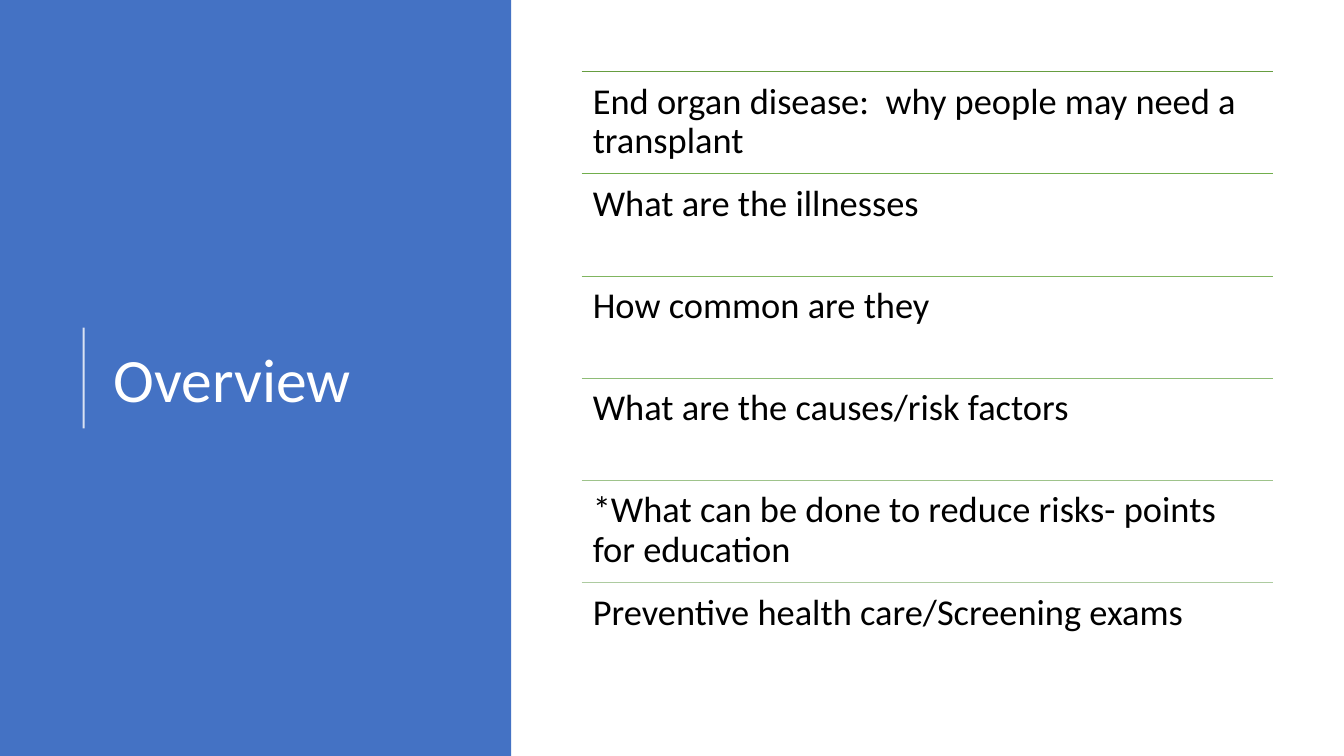
from pptx import Presentation, util as u
from pptx.dml.color import RGBColor
from pptx.enum import shapes, text
from pptx.oxml.ns import qn
from lxml import etree


def tint(code):
    return RGBColor.from_string(code)


class Deck:
    font = "Calibri"

    def __init__(self, wide, high):
        self.show = Presentation()
        self.show.slide_width = u.Inches(wide)
        self.show.slide_height = u.Inches(high)
        self.slide = self.show.slides.add_slide(self.show.slide_layouts[6])

    def panel(self, box, fill):
        shape = self.slide.shapes.add_shape(
            shapes.MSO_SHAPE.RECTANGLE, *map(u.Inches, box))
        shape.shadow.inherit = False
        shape.fill.solid()
        shape.fill.fore_color.rgb = tint(fill)
        shape.line.fill.background()

    def rule(self, ends, color, width, alpha=100):
        line = self.slide.shapes.add_connector(
            shapes.MSO_CONNECTOR.STRAIGHT, *map(u.Inches, ends))
        line.line.color.rgb = tint(color)
        line.line.width = u.Pt(width)
        props = line._element.spPr
        if alpha < 100:
            shade = props.find(".//" + qn("a:srgbClr"))
            etree.SubElement(shade, qn("a:alpha"), val=str(alpha * 1000))
        etree.SubElement(props, qn("a:effectLst"))

    def label(self, box, words, size, color, inset, anchor):
        frame = self.slide.shapes.add_textbox(*map(u.Inches, box)).text_frame
        frame.word_wrap = True
        frame.vertical_anchor = anchor
        frame.margin_left = frame.margin_right = u.Inches(inset[0])
        frame.margin_top = frame.margin_bottom = u.Inches(inset[1])
        para = frame.paragraphs[0]
        para.line_spacing = 0.9
        run = para.add_run()
        run.text = words
        run.font.name = self.font
        run.font.size = u.Pt(size)
        run.font.color.rgb = tint(color)


def main():
    deck = Deck(13.33, 7.5)

    # Title panel
    deck.panel((0, 0, 5.07, 7.5), "4472C4")
    deck.rule((0.83, 4.25, 0.83, 3.25), "FFFFFF", 1.5, alpha=80)
    deck.label((1.03, 0.78, 3.69, 6.02), "Overview", 44, "FFFFFF",
               (0.1, 0.05), text.MSO_ANCHOR.MIDDLE)

    # Topics, each under a rule that grows paler
    topics = [
        ("End organ disease:  why people may need a transplant", "669D40"),
        ("What are the illnesses", "71AE4C"),
        ("How common are they", "80B560"),
        ("What are the causes/risk factors", "8EBC76"),
        ("*What can be done to reduce risks- points for education", "9EC38B"),
        ("Preventive health care/Screening exams", "ADCBA0"),
    ]
    left, width, first, last = 5.77, 6.86, 0.71, 5.78
    step = (last - first) / (len(topics) - 1)
    for index, (words, color) in enumerate(topics):
        top = first + index * step
        deck.rule((left, top, left + width, top), color, 0.5)
        deck.label((left, top, width, step), words, 26, "000000",
                   (0.11, 0.11), text.MSO_ANCHOR.TOP)

    deck.show.save("out.pptx")


if __name__ == "__main__":
    main()
